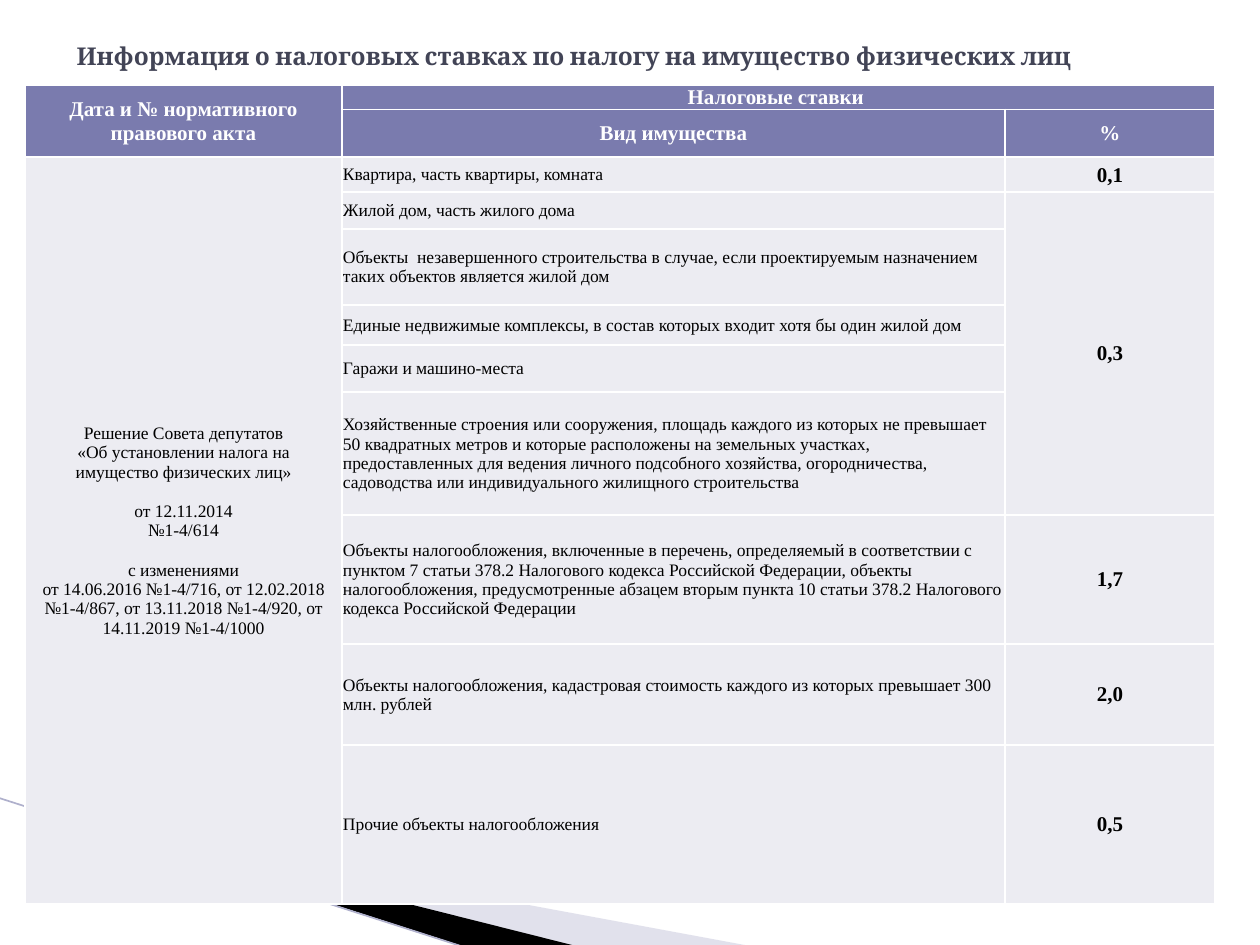
import pptx
import pptx.util
import pptx.dml.color
import pptx.enum.shapes
import pptx.enum.text
import pptx.oxml
import pptx.oxml.ns
import lxml.etree

EMU_PER_PX = 914400 / 126
SLIDE_SIZE = (1260, 945)

THEME = {
    "title": {"name": "Cambria", "size": 14, "bold": True, "color": "424456"},
    "header": {"name": "Times New Roman", "size": 12, "bold": True, "color": "FFFFFF"},
    "body": {"name": "Times New Roman", "size": 10, "bold": False, "color": "000000"},
    "rate": {"name": "Times New Roman", "size": 12, "bold": True, "color": "000000"},
    "header_fill": "7A7BAE",
    "body_fill": "ECECF2",
    "border": "FFFFFF",
    "border_width": 1,
    "pale_wedge": "B6B6D1",
    "pale_opacity": 40,
    "dark_wedge": "000000",
    "stripe": "AFB0CC",
    "stripe_width": 0.95,
    "act_gap": 11.5,
}

TITLE = "Информация о налоговых ставках по налогу на имущество физических лиц"
HEADERS = {"act": "Дата и № нормативного правового акта", "rates": "Налоговые ставки ",
           "property": "Вид имущества", "percent": "%"}
ACT_BLOCKS = [
    ["Решение Совета депутатов", "«Об установлении налога на", "имущество физических лиц»"],
    ["от 12.11.2014", "№1-4/614"],
    ["с изменениями", "от 14.06.2016 №1-4/716, от 12.02.2018 №1-4/867, "
     "от 13.11.2018 №1-4/920, от 14.11.2019 №1-4/1000"],
]
RATES = [
    ("0,1", ["Квартира, часть квартиры, комната"]),
    ("0,3", [
        "Жилой дом, часть жилого дома",
        "Объекты  незавершенного строительства в случае, если проектируемым назначением "
        "таких объектов является жилой дом",
        "Единые недвижимые комплексы, в состав которых входит хотя бы один жилой дом",
        "Гаражи и машино-места",
        "Хозяйственные строения или сооружения, площадь каждого из которых не превышает "
        "50 квадратных метров и которые расположены на земельных участках, предоставленных "
        "для ведения личного подсобного хозяйства, огородничества, садоводства или "
        "индивидуального жилищного строительства",
    ]),
    ("1,7", [
        "Объекты налогообложения, включенные в перечень, определяемый в соответствии с "
        "пунктом 7 статьи 378.2 Налогового кодекса Российской Федерации, объекты "
        "налогообложения, предусмотренные абзацем вторым пункта 10 статьи 378.2 Налогового "
        "кодекса Российской Федерации",
    ]),
    ("2,0", ["Объекты налогообложения, кадастровая стоимость каждого из которых превышает "
             "300 млн. рублей"]),
    ("0,5", ["Прочие объекты налогообложения"]),
]

TITLE_BOX = (64, 26, 1134, 59)
TABLE_ORIGIN = (25, 85)
COLUMN_WIDTHS = [317, 663, 210]
ROW_HEIGHTS = [23, 24, 35, 37, 76, 40, 47, 123, 129, 101, 159]
HEADER_ROWS = 2
PALE_WEDGE = [(69, 820), (750, 946), (575, 946), (69, 819)]
DARK_WEDGE = [(67, 818), (576, 946), (469, 948), (68, 819)]
STRIPE = (-1, 798, 467, 948)

CENTER = pptx.enum.text.PP_ALIGN.CENTER
LEFT = pptx.enum.text.PP_ALIGN.LEFT
MIDDLE = pptx.enum.text.MSO_ANCHOR.MIDDLE


def px(length):
    return pptx.util.Emu(round(length * EMU_PER_PX))


def rgb(color):
    return pptx.dml.color.RGBColor.from_string(color)


def apply(target, values):
    for name, value in values.items():
        setattr(target, name, value)


def write(paragraph, text, style, alignment):
    paragraph.alignment = alignment
    run = paragraph.add_run()
    run.text = text
    apply(run.font, {"name": style["name"], "size": pptx.util.Pt(style["size"]),
                     "bold": style["bold"]})
    run.font.color.rgb = rgb(style["color"])


def add_wedge(slide, points, color, opacity=100):
    outline = slide.shapes.build_freeform(*points[0], scale=EMU_PER_PX)
    outline.add_line_segments(points[1:])
    wedge = outline.convert_to_shape()
    wedge.shadow.inherit = False
    wedge.fill.solid()
    wedge.fill.fore_color.rgb = rgb(color)
    wedge.line.fill.background()
    if opacity < 100:
        tint = wedge.fill._xPr.find(".//" + pptx.oxml.ns.qn("a:srgbClr"))
        lxml.etree.SubElement(tint, pptx.oxml.ns.qn("a:alpha"), val=str(opacity * 1000))


def add_stripe(slide):
    stripe = slide.shapes.add_connector(
        pptx.enum.shapes.MSO_CONNECTOR.STRAIGHT, *map(px, STRIPE))
    stripe.line.color.rgb = rgb(THEME["stripe"])
    stripe.line.width = pptx.util.Pt(THEME["stripe_width"])
    lxml.etree.SubElement(stripe._element.spPr, pptx.oxml.ns.qn("a:effectLst"))


def format_cell(cell, fill):
    properties = cell._tc.get_or_add_tcPr()
    for side in ("lnL", "lnR", "lnT", "lnB"):
        properties.append(pptx.oxml.parse_xml(
            f'<a:{side} {pptx.oxml.ns.nsdecls("a")} w="{THEME["border_width"] * 12700}">'
            f'<a:solidFill><a:srgbClr val="{THEME["border"]}"/></a:solidFill></a:{side}>'))
    cell.fill.solid()
    cell.fill.fore_color.rgb = rgb(fill)
    apply(cell, {"margin_left": px(1), "margin_right": px(1), "margin_top": px(1),
                 "margin_bottom": 0, "vertical_anchor": MIDDLE})


def fill_cell(cell, text, style, alignment=CENTER):
    write(cell.text_frame.paragraphs[0], text, THEME[style], alignment)


def fill_act(cell):
    frame = cell.text_frame
    for block_index, block in enumerate(ACT_BLOCKS):
        for line_index, text in enumerate(block):
            first = block_index == line_index == 0
            paragraph = frame.paragraphs[0] if first else frame.add_paragraph()
            if block_index and not line_index:
                paragraph.space_before = pptx.util.Pt(THEME["act_gap"])
            write(paragraph, text, THEME["body"], CENTER)


def add_rates_table(slide):
    rates = slide.shapes.add_table(
        len(ROW_HEIGHTS), len(COLUMN_WIDTHS), *map(px, TABLE_ORIGIN),
        px(sum(COLUMN_WIDTHS)), px(sum(ROW_HEIGHTS))).table
    apply(rates, {"first_row": False, "horz_banding": False})
    for column, width in zip(rates.columns, COLUMN_WIDTHS):
        column.width = px(width)
    for index, (row, height) in enumerate(zip(rates.rows, ROW_HEIGHTS)):
        row.height = px(height)
        for cell in row.cells:
            format_cell(cell, THEME["header_fill" if index < HEADER_ROWS else "body_fill"])

    rates.cell(0, 0).merge(rates.cell(HEADER_ROWS - 1, 0))
    rates.cell(0, 1).merge(rates.cell(0, 2))
    rates.cell(HEADER_ROWS, 0).merge(rates.cell(len(ROW_HEIGHTS) - 1, 0))
    for place, key in {(0, 0): "act", (0, 1): "rates", (1, 1): "property",
                       (1, 2): "percent"}.items():
        fill_cell(rates.cell(*place), HEADERS[key], "header")
    fill_act(rates.cell(HEADER_ROWS, 0))

    top = HEADER_ROWS
    for percent, properties in RATES:
        for offset, kind in enumerate(properties):
            fill_cell(rates.cell(top + offset, 1), kind, "body", LEFT)
        if len(properties) > 1:
            rates.cell(top, 2).merge(rates.cell(top + len(properties) - 1, 2))
        fill_cell(rates.cell(top, 2), percent, "rate")
        top += len(properties)


def main():
    deck = pptx.Presentation()
    deck.slide_width, deck.slide_height = map(px, SLIDE_SIZE)
    slide = deck.slides.add_slide(deck.slide_layouts[5])
    add_wedge(slide, PALE_WEDGE, THEME["pale_wedge"], THEME["pale_opacity"])
    add_wedge(slide, DARK_WEDGE, THEME["dark_wedge"])
    add_stripe(slide)

    heading = slide.shapes.title
    apply(heading, dict(zip(("left", "top", "width", "height"), map(px, TITLE_BOX))))
    apply(heading.text_frame, {"vertical_anchor": MIDDLE, "word_wrap": True,
                               "auto_size": pptx.enum.text.MSO_AUTO_SIZE.NONE})
    write(heading.text_frame.paragraphs[0], TITLE, THEME["title"], LEFT)
    add_rates_table(slide)
    deck.save("out.pptx")


if __name__ == "__main__":
    main()
